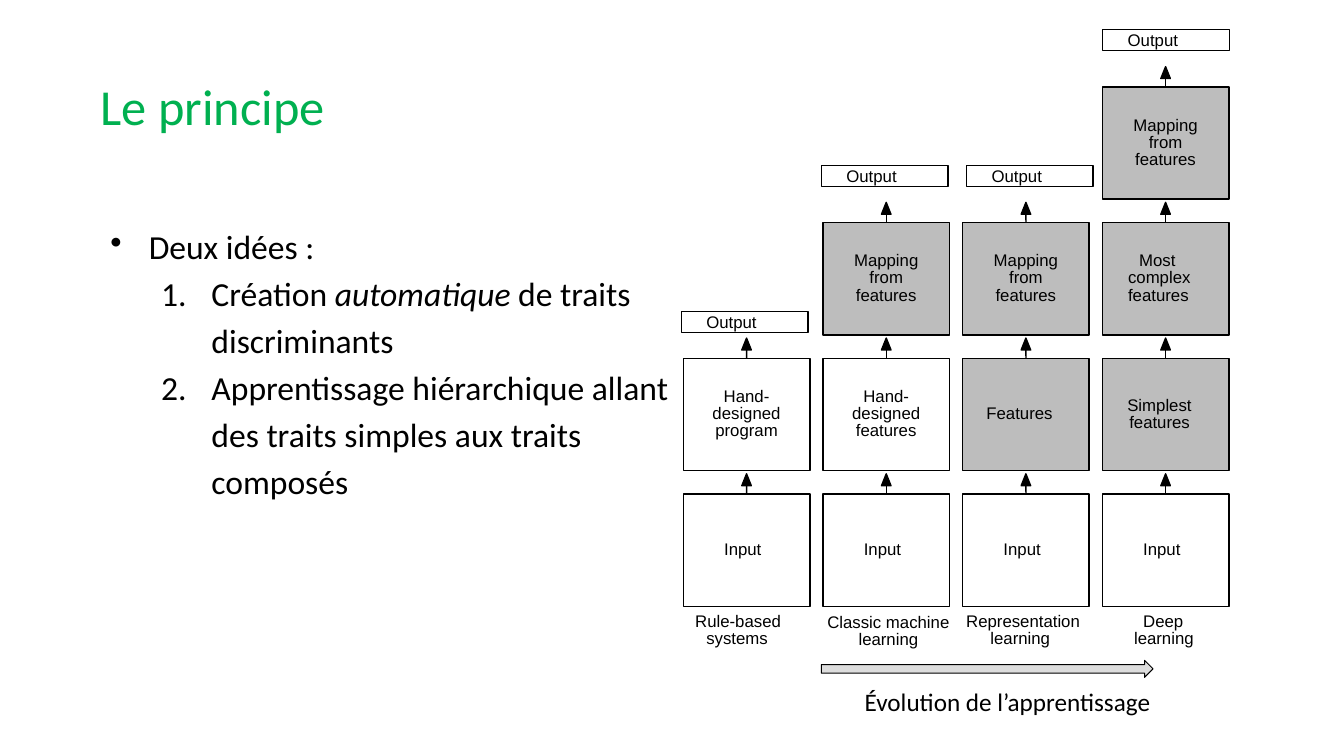
import pptx
import pptx.util
import pptx.dml.color
import pptx.enum.shapes
import pptx.enum.text
from lxml import etree
from pptx.util import Cm, Pt

THEME = {
    "ink": pptx.dml.color.RGBColor.from_string("000000"),
    "title": pptx.dml.color.RGBColor.from_string("00B050"),
    "learned": pptx.dml.color.RGBColor.from_string("BDBDBD"),
    "arrow": pptx.dml.color.RGBColor.from_string("DDDDDD"),
    "title_size": Pt(36), "body_size": Pt(24), "note_size": Pt(18), "label_size": Pt(12),
    "text_font": "Calibri", "label_font": "Arial",
    "text_spacing": Pt(33.5), "label_spacing": Pt(12.3), "line": Pt(1), "thin": Pt(0.75),
}
LEFT = pptx.enum.text.PP_ALIGN.LEFT
CENTER = pptx.enum.text.PP_ALIGN.CENTER
MIDDLE = pptx.enum.text.MSO_ANCHOR.MIDDLE
SHAPE = pptx.enum.shapes.MSO_SHAPE

deck = pptx.Presentation()
deck.slide_width, deck.slide_height = Cm(33.87), Cm(19.05)
page = deck.slides.add_slide(deck.slide_layouts[6])


def add_box(kind, left, top, width, height, fill=None, line=THEME["line"]):
    box = page.shapes.add_shape(kind, Cm(left), Cm(top), Cm(width), Cm(height))
    box.shadow.inherit = False
    if fill is None:
        box.fill.background()
    else:
        box.fill.solid()
        box.fill.fore_color.rgb = fill
    box.line.color.rgb = THEME["ink"]
    box.line.width = line
    return box


def style(para, size, font, color=THEME["ink"], align=LEFT, spacing=None, margin=0, indent=0):
    para.alignment = align
    para.line_spacing = spacing
    para._p.get_or_add_pPr().set("marL", str(Cm(margin)))
    para._p.get_or_add_pPr().set("indent", str(Cm(indent)))
    for span in para.runs:
        span.font.size = size
        span.font.name = font
        span.font.color.rgb = color


LABELS = {
    "Input": (1.03, LEFT, 0, 0),
    "Hand- designed program": (0.55, CENTER, 0, 0),
    "Hand- designed features": (0.55, CENTER, 0, 0),
    "Mapping from features": (0.6, CENTER, 0, 0),
    "Features": (0.6, LEFT, 0, 0),
    "Simplest features": (0.6, LEFT, 0.08, -0.05),
    "Most complex features": (0.62, LEFT, 0.03, 0.28),
}
WHITE, GREY = None, THEME["learned"]
COLUMNS = [
    ([("Input", WHITE), ("Hand- designed program", WHITE)], 17.17, 7.85),
    ([("Input", WHITE), ("Hand- designed features", WHITE),
      ("Mapping from features", GREY)], 20.7, 4.17),
    ([("Input", WHITE), ("Features", GREY), ("Mapping from features", GREY)], 24.36, 4.17),
    ([("Input", WHITE), ("Simplest features", GREY), ("Most complex features", GREY),
      ("Mapping from features", GREY)], 27.79, 0.74),
]
FIRST_LEFT, COLUMN_STEP = 17.22, 3.52
BOTTOM_TOP, ROW_STEP = 12.45, 3.42
BOX_WIDTH, BOX_HEIGHT = 3.19, 2.83
TIP_RISE, TIP_WIDTH, TIP_HEIGHT = 0.51, 0.24, 0.3

for column, (stages, output_left, output_top) in enumerate(COLUMNS):
    left = FIRST_LEFT + column * COLUMN_STEP
    middle = left + BOX_WIDTH / 2
    for row, (label, fill) in enumerate(stages):
        top = BOTTOM_TOP - row * ROW_STEP
        inset, align, margin, indent = LABELS[label]
        box = add_box(SHAPE.RECTANGLE, left, top, BOX_WIDTH, BOX_HEIGHT, fill)
        frame = box.text_frame
        frame.word_wrap = True
        frame.vertical_anchor = MIDDLE
        frame.margin_left = Cm(inset)
        frame.margin_right = Cm(0.5)if align == LEFT else Cm(inset)
        frame.margin_top = frame.margin_bottom = 0
        frame.text = label
        style(frame.paragraphs[0], THEME["label_size"], THEME["label_font"], align=align,
              spacing=THEME["label_spacing"], margin=margin, indent=indent)

        tip_top = top - TIP_RISE
        stem = page.shapes.add_connector(
            pptx.enum.shapes.MSO_CONNECTOR.STRAIGHT,
            Cm(middle), Cm(top), Cm(middle), Cm(tip_top + TIP_HEIGHT))
        stem.begin_connect(box, 0)
        stem.line.color.rgb = THEME["ink"]
        stem.line.width = THEME["line"]
        etree.SubElement(stem._element.spPr, pptx.oxml.ns.qn("a:effectLst"))
        add_box(SHAPE.ISOSCELES_TRIANGLE, middle - TIP_WIDTH / 2, tip_top,
                TIP_WIDTH, TIP_HEIGHT, THEME["ink"])

    output = add_box(SHAPE.RECTANGLE, output_left, output_top, BOX_WIDTH, 0.53)
    frame = output.text_frame
    frame.margin_left = frame.margin_right = frame.margin_top = frame.margin_bottom = 0
    frame.vertical_anchor = MIDDLE
    frame.text = "Output"
    style(frame.paragraphs[0], THEME["label_size"], THEME["label_font"], margin=0.63)

LABEL = {"size": THEME["label_size"], "font": THEME["label_font"],
         "spacing": THEME["label_spacing"]}
TEXTS = [
    ("Rule-based systems", 17.5, 15.47, 2.62, 0.89, 0, dict(LABEL, margin=0.3, indent=-0.28)),
    ("Classic machine learning", 20.75, 15.49, 3.28, 0.86, 0, dict(LABEL, align=CENTER)),
    ("Representation learning", 24.33, 15.47, 3.45, 0.89, 0,
     dict(LABEL, margin=0.63, indent=-0.61)),
    ("Deep learning", 28.55, 15.47, 1.85, 0.89, 0, dict(LABEL, margin=0.03, indent=0.23)),
    ("Le principe", 2.51, 2.24, 18.52, 1.24, 0,
     {"size": THEME["title_size"], "font": THEME["text_font"], "color": THEME["title"],
      "spacing": THEME["text_spacing"], "margin": 0.03}),
    ("Évolution de l’apprentissage", 21.54, 17.17, 11.23, 1.02, 1,
     {"size": THEME["note_size"], "font": THEME["text_font"]}),
]
for text, left, top, width, height, padding, look in TEXTS:
    box = page.shapes.add_textbox(Cm(left), Cm(top), Cm(width), Cm(height))
    frame = box.text_frame
    frame.word_wrap = True
    frame.margin_left = frame.margin_right = Cm(0.25 * padding)
    frame.margin_top = frame.margin_bottom = Cm(0.13 * padding)
    frame.text = text
    style(frame.paragraphs[0], **look)

add_box(SHAPE.RIGHT_ARROW, 20.7, 16.64, 8.36, 0.43, THEME["arrow"], THEME["thin"])

IDEAS = [
    (0, 0.99, -0.97, "buChar", {"char": "•"}, [("Deux idées :", False)]),
    (1, 2.57, -1.27, "buAutoNum", {"type": "arabicPeriod"},
     [("Création ", False), ("automatique", True), (" de traits discriminants", False)]),
    (1, 2.57, -1.27, "buAutoNum", {"type": "arabicPeriod"},
     [("Apprentissage hiérarchique allant des traits simples aux traits composés", False)]),
]
box = page.shapes.add_textbox(Cm(2.51), Cm(5.41), Cm(15.01), Cm(7.44))
frame = box.text_frame
frame.word_wrap = True
for number, (level, margin, indent, bullet, settings, spans) in enumerate(IDEAS):
    para = frame.add_paragraph() if number else frame.paragraphs[0]
    para.level = level
    mark = etree.SubElement(para._p.get_or_add_pPr(), pptx.oxml.ns.qn("a:" + bullet))
    for key, value in settings.items():
        mark.set(key, value)
    for text, italic in spans:
        span = para.add_run()
        span.text = text
        span.font.italic = italic
    style(para, THEME["body_size"], THEME["text_font"], spacing=THEME["text_spacing"],
          margin=margin, indent=indent)

deck.save("out.pptx")
